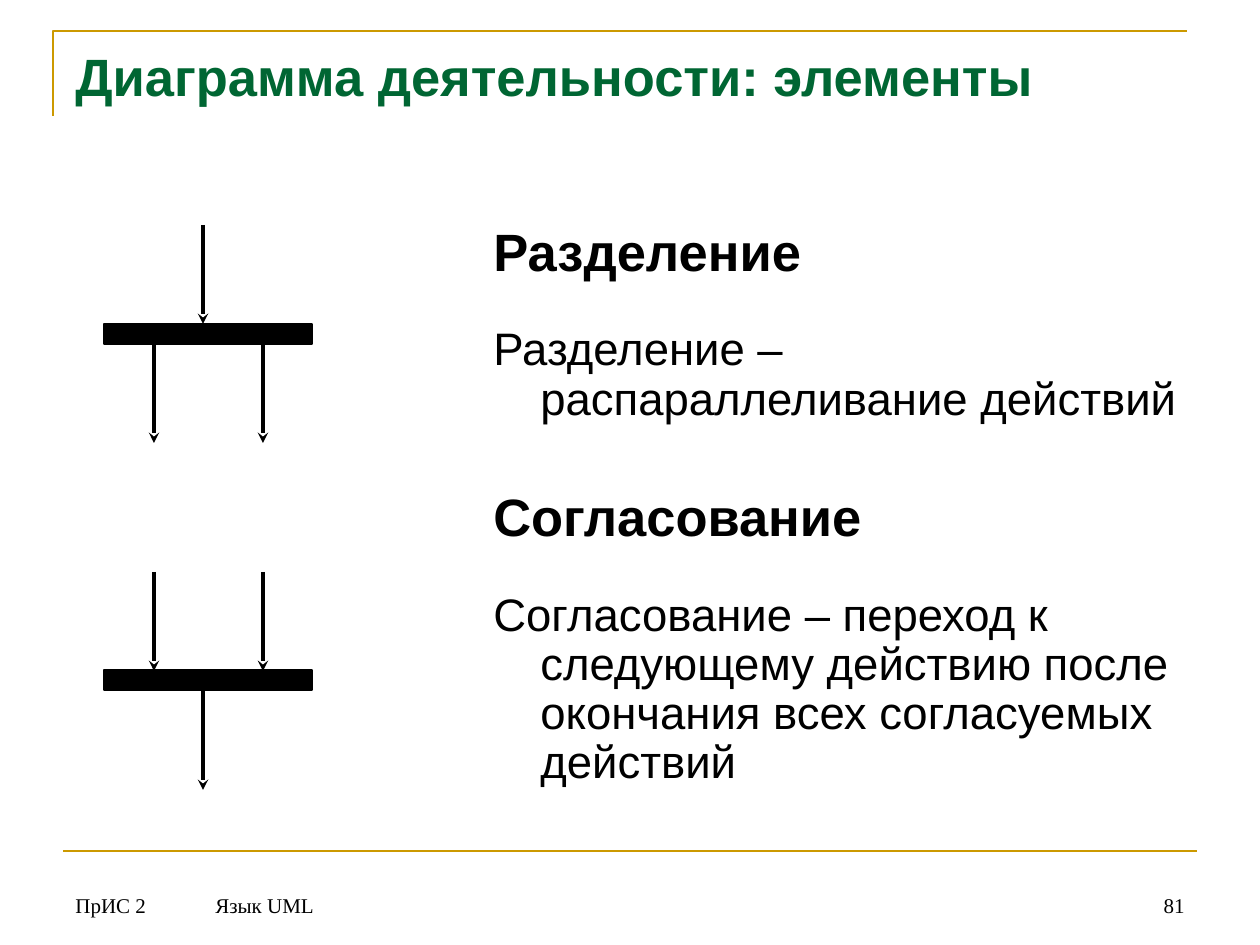
from lxml import etree
from pptx import Presentation
from pptx import util as u
from pptx.dml.color import RGBColor
from pptx.enum import shapes, text
from pptx.oxml.ns import qn

SCALE = u.Inches(1) / 126  # EMU in one px
COLORS = {"gold": "CC9900", "green": "006633", "black": "000000", "white": "FFFFFF"}


def px(*lengths):
    return [u.Emu(round(length * SCALE)) for length in lengths]


def add_text(box, words, size, font="Arial", color="black", bold=False,
             align=text.PP_ALIGN.LEFT, anchor=text.MSO_ANCHOR.TOP):
    """Write one run in a new text box and return its paragraph."""
    frame = slide.shapes.add_textbox(*px(*box)).text_frame if isinstance(box, tuple) else box
    frame.word_wrap = True
    frame.vertical_anchor = anchor
    paragraph = frame.paragraphs[0]
    if paragraph.runs:
        paragraph = frame.add_paragraph()
    paragraph.alignment = align
    run = paragraph.add_run()
    run.text = words
    run.font.name = font
    run.font.size = u.Pt(size)
    run.font.bold = bold
    run.font.color.rgb = RGBColor.from_string(COLORS[color])
    return paragraph


presentation = Presentation()
presentation.slide_width, presentation.slide_height = px(1260, 945)
slide = presentation.slides.add_slide(presentation.slide_layouts[6])
slide.background.fill.solid()
slide.background.fill.fore_color.rgb = RGBColor.from_string(COLORS["white"])

# Corner frame above the title
builder = slide.shapes.build_freeform(53, 116, scale=SCALE)
builder.add_line_segments([(53, 31), (1187, 31)], close=False)
corner = builder.convert_to_shape()
corner.shadow.inherit = False
corner.fill.background()
corner.line.color.rgb = RGBColor.from_string(COLORS["gold"])
corner.line.width = u.Pt(1.5)

# Footer
for left, width, words, align in [
    (63, 121, "ПрИС 2", text.PP_ALIGN.LEFT),
    (203, 912, "Язык UML", text.PP_ALIGN.LEFT),
    (1126, 71, "81", text.PP_ALIGN.RIGHT),
]:
    add_text((left, 861, width, 63), words, 12, font="Times New Roman",
             align=align, anchor=text.MSO_ANCHOR.BOTTOM)

# Title
add_text((63, 38, 1134, 158), "Диаграмма деятельности: элементы", 30,
         color="green", bold=True)

# Definitions with hanging indents
body = slide.shapes.add_textbox(*px(481, 220, 716, 624)).text_frame
indent = px(47)[0]
for words, size, bold, space_before in [
    ("Разделение", 30, True, 0),
    ("Разделение – распараллеливание действий", 26, False, 25),
    ("Согласование", 30, True, 38),
    ("Согласование – переход к следующему действию после окончания всех "
     "согласуемых действий", 26, False, 25),
]:
    paragraph = add_text(body, words, size, bold=bold)
    paragraph.line_spacing = 0.9
    paragraph.space_before = u.Pt(space_before)
    properties = paragraph._p.get_or_add_pPr()
    properties.set("marL", str(indent))
    properties.set("indent", str(-indent))

# Fork and join bars
for top in (324, 670):
    bar = slide.shapes.add_shape(shapes.MSO_SHAPE.RECTANGLE, *px(104, top, 208, 20))
    bar.shadow.inherit = False
    bar.fill.solid()
    bar.fill.fore_color.rgb = RGBColor.from_string(COLORS["black"])
    bar.line.color.rgb = RGBColor.from_string(COLORS["black"])
    bar.line.width = u.Pt(0.75)

# Footer rule, then the flow arrows into and out of the bars
lines = [(63, 851, 1197, 851, "gold", 1.5)]
for top, columns in [(225, [203]), (344, [154, 263]), (572, [154, 263]), (691, [203])]:
    lines += [(x, top, x, top + 99, "black", 2) for x in columns]
for *ends, color, width in lines:
    line = slide.shapes.add_connector(shapes.MSO_CONNECTOR.STRAIGHT, *px(*ends))
    line.line.color.rgb = RGBColor.from_string(COLORS[color])
    line.line.width = u.Pt(width)
    if color == "black":
        etree.SubElement(line.line._get_or_add_ln(), qn("a:tailEnd"), type="stealth")
    etree.SubElement(line._element.spPr, qn("a:effectLst"))

presentation.save("out.pptx")
